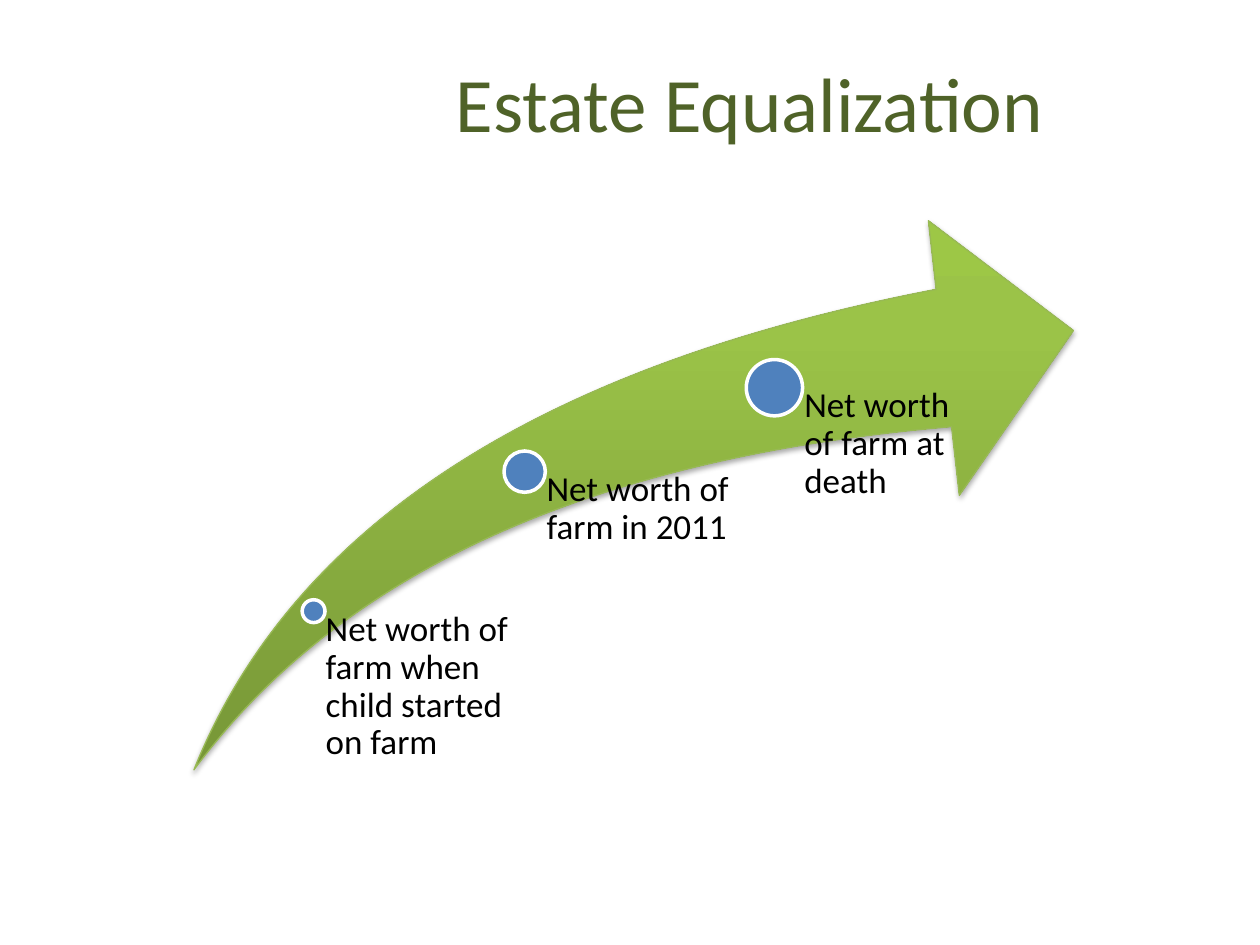
import copy

from lxml import etree
from pptx import Presentation
from pptx import util as u
from pptx.dml.color import RGBColor
from pptx.enum import shapes, text
from pptx.oxml import ns

TITLE_GREEN = RGBColor(0x4F, 0x62, 0x28)
ARROW_LINE = RGBColor(0x98, 0xB9, 0x55)
ARROW_STOPS = (
    (0, RGBColor(0x77, 0x97, 0x37)),
    (0.8, RGBColor(0x9B, 0xC3, 0x48)),
    (1, RGBColor(0x9D, 0xC7, 0x46)),
)
DOT_BLUE = RGBColor(0x4F, 0x81, 0xBD)
WHITE = RGBColor(0xFF, 0xFF, 0xFF)
BLACK = RGBColor(0, 0, 0)

MILESTONES = (
    ("Net worth of farm when child started on farm", 0.136, 0.711, 0.026, 0.233),
    ("Net worth of farm in 2011", 0.376, 0.457, 0.047, 0.24),
    ("Net worth of farm at death", 0.66, 0.304, 0.064, 0.24),
)


def add_text(slide, box, content, size, color, align=text.PP_ALIGN.LEFT,
             anchor=text.MSO_ANCHOR.TOP, insets=(0, 0, 0, 0), spacing=None):
    """Add a wrapped text box; box and insets are in centimetres."""
    tf = slide.shapes.add_textbox(*map(u.Cm, box)).text_frame
    tf.word_wrap = True
    tf.vertical_anchor = anchor
    tf.margin_left, tf.margin_top, tf.margin_right, tf.margin_bottom = map(u.Cm, insets)
    p = tf.paragraphs[0]
    p.alignment = align
    p.line_spacing = spacing
    r = p.add_run()
    r.text = content
    r.font.name = "Calibri"
    r.font.size = u.Pt(size)
    r.font.color.rgb = color


def add_title(slide, box):
    """Place the slide title centred in its box."""
    add_text(slide, box, "Estate Equalization", 44, TITLE_GREEN,
             align=text.PP_ALIGN.CENTER, anchor=text.MSO_ANCHOR.MIDDLE,
             insets=(0.25, 0.13, 0.25, 0.13))


def fill_gradient(sp, stops, angle):
    """Fill a shape with a linear gradient of three stops."""
    sp.fill.gradient()
    sp.fill.gradient_angle = angle
    gs_list = sp.fill._fill._gradFill.find(ns.qn("a:gsLst"))
    gs_list.append(copy.deepcopy(gs_list[-1]))
    for stop, (position, color) in zip(sp.fill.gradient_stops, stops):
        stop.position = position
        stop.color.rgb = color


def add_drop_shadow(sp, blur, distance, opacity):
    """Give a shape a soft black shadow below it."""
    sp.shadow.inherit = False
    effects = sp._element.spPr.find(ns.qn("a:effectLst"))
    shadow = etree.SubElement(effects, ns.qn("a:outerShdw"), blurRad=str(u.Pt(blur)),
                              dist=str(u.Pt(distance)), dir="5400000", rotWithShape="0")
    color = etree.SubElement(shadow, ns.qn("a:srgbClr"), val=str(BLACK))
    etree.SubElement(color, ns.qn("a:alpha"), val=str(opacity * 1000))


def add_arrow(slide, box):
    """Draw the rising arrow that fills its box."""
    sp = slide.shapes.add_shape(shapes.MSO_SHAPE.SWOOSH_ARROW, *map(u.Cm, box))
    sp.adjustments[0] = sp.adjustments[1] = 0.25
    fill_gradient(sp, ARROW_STOPS, 90)
    sp.line.color.rgb = ARROW_LINE
    sp.line.width = u.Pt(0.75)
    add_drop_shadow(sp, 3.1, 1.8, 35)


def add_milestone(slide, box, label, x_share, y_share, dot_share, label_share):
    """Place one dot on the arrow, with its label down to the box's bottom."""
    left, top, width, height = box
    x, y = left + x_share * width, top + y_share * height
    size = dot_share * width
    sp = slide.shapes.add_shape(shapes.MSO_SHAPE.OVAL, u.Cm(x - size / 2),
                                u.Cm(y - size / 2), u.Cm(size), u.Cm(size))
    sp.shadow.inherit = False
    sp.fill.solid()
    sp.fill.fore_color.rgb = DOT_BLUE
    sp.line.color.rgb = WHITE
    sp.line.width = u.Pt(2)
    add_text(slide, (x, y, label_share * width, top + height - y), label, 20, BLACK,
             insets=(size * 0.53, 0, 0, 0), spacing=0.9)


def add_growth_diagram(slide, box):
    """Draw the arrow and its milestones in the box."""
    add_arrow(slide, box)
    for milestone in MILESTONES:
        add_milestone(slide, box, *milestone)


def main():
    """Build and save the slide."""
    prs = Presentation()
    prs.slide_width, prs.slide_height = u.Cm(25.4), u.Cm(19.05)
    s = prs.slides.add_slide(prs.slide_layouts[6])
    add_title(s, (6.1, 0.76, 18.03, 2.57))
    add_growth_diagram(s, (3.91, 4.45, 17.73, 11.07))
    prs.save("out.pptx")


if __name__ == "__main__":
    main()
